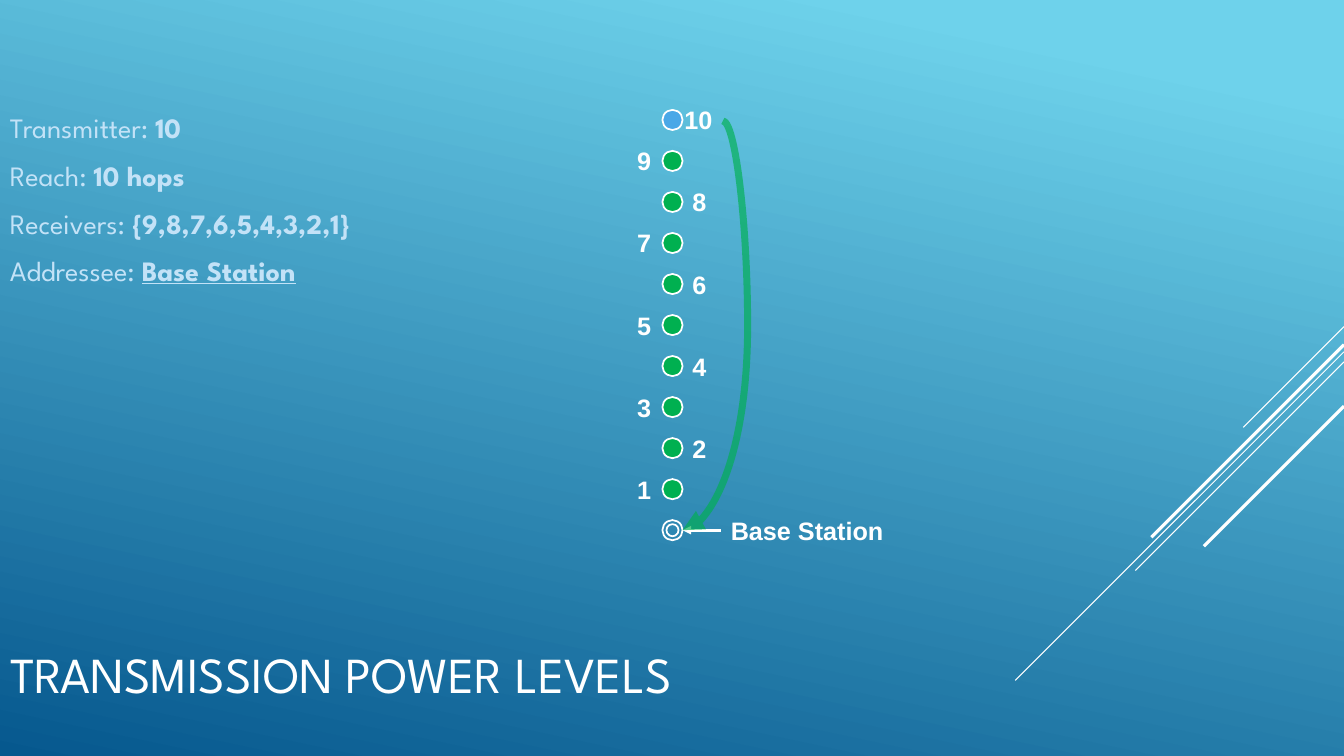
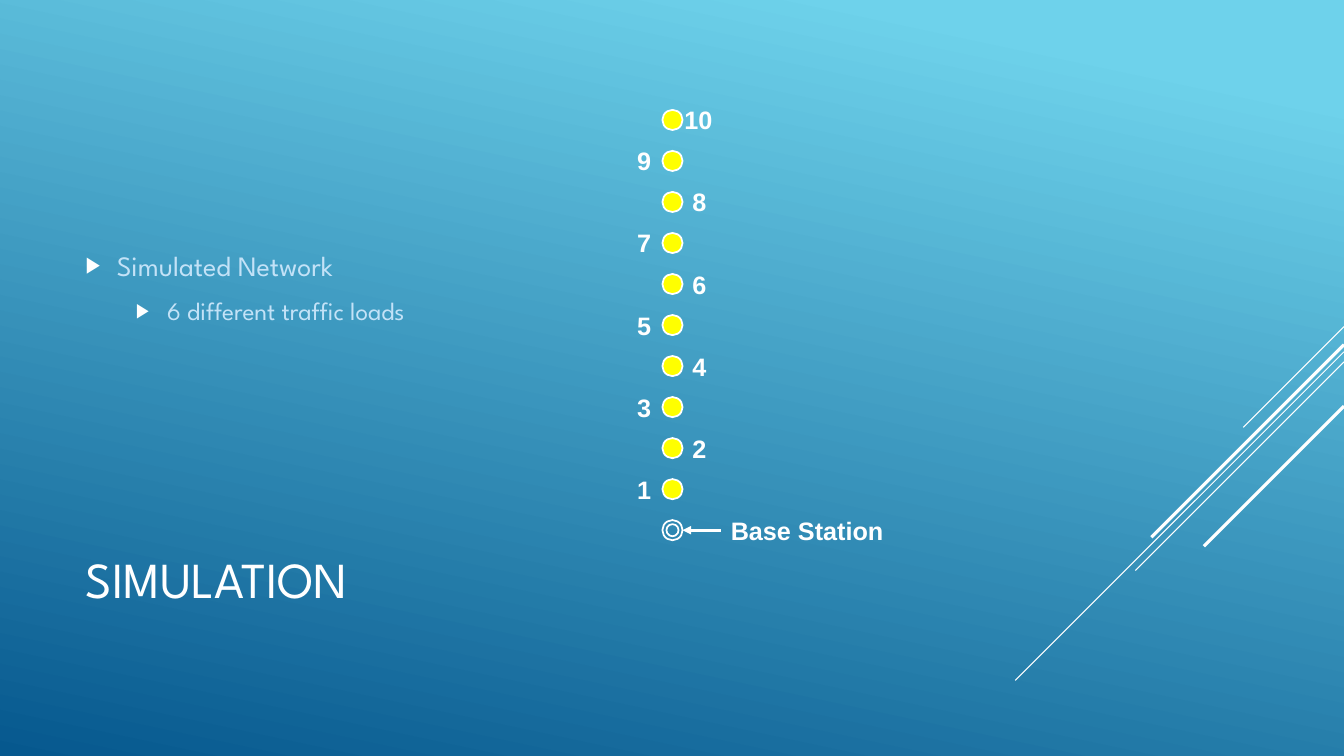
from lxml.etree import SubElement
from pptx import Presentation
from pptx.dml.color import RGBColor
from pptx.enum.shapes import MSO_CONNECTOR as Connector, MSO_SHAPE as Shape
from pptx.enum.text import MSO_ANCHOR as Anchor, MSO_AUTO_SIZE as AutoSize, PP_ALIGN as Align
from pptx.oxml.ns import qn
from pptx.util import Inches, Pt

COLORS = {
    "sky": "6ED2EB",
    "deep": "06588E",
    "white": "FFFFFF",
    "body": "C3E2F7",
    "receiver": "00B050",
    "transmitter": "4AA8E7",
    "idle": "FFFF00",
}
HEADING_FONT = "League Spartan"
LABEL_FONT = "Arial"
TITLE_ONLY = 5
STREAKS = [
    (3.24, 1.0, 0.75),
    (3.49, 3.26, 0.75),
    (3.59, 2.07, 0.75),
    (3.42, 1.91, 2.25),
    (4.03, 1.39, 2.25),
]
NODE_COUNT = 10
NODE_PITCH = 0.407
NODE_SIZE = 0.2
CHAIN_LEFT, CHAIN_TOP = 6.22, 1.0


def rgb(name):
    return RGBColor.from_string(COLORS[name])


def style_font(font, name, size, color, bold=None):
    font.name = name
    font.size = Pt(size)
    font.color.rgb = rgb(color)
    font.bold = bold


def add_line(slide, start, end, color, width, kind=Connector.STRAIGHT, arrow=False):
    points = [Inches(value) for value in (*start, *end)]
    connector = slide.shapes.add_connector(kind, *points)
    connector.line.color.rgb = rgb(color)
    connector.line.width = Pt(width)
    properties = connector.element.spPr
    if arrow:
        SubElement(properties.find(qn("a:ln")), qn("a:tailEnd"), type="triangle")
    SubElement(properties, qn("a:effectLst"))
    return connector


def style_master(presentation, slide):
    master = presentation.slide_master
    fill = master.background.fill
    fill.gradient()
    fill.gradient_angle = 258
    for stop, position, color in zip(fill.gradient_stops, (0.1, 1), ("sky", "deep")):
        stop.position = position
        stop.color.rgb = rgb(color)
    for number, (top, reach, width) in enumerate(STREAKS, start=20):
        streak = add_line(slide, (13.33, top), (13.33 - reach, top + reach), "white", width)
        streak.element.find(".//" + qn("p:cNvPr")).set("id", str(number))
        master.shapes.element.append(streak.element)


def set_title(slide, text, left, top):
    title = slide.shapes.title
    title.left, title.top = Inches(left), Inches(top)
    title.width, title.height = Inches(9.33), Inches(1.65)
    frame = title.text_frame
    frame.text = text
    frame.auto_size = AutoSize.NONE
    frame.vertical_anchor = Anchor.MIDDLE
    paragraph = frame.paragraphs[0]
    paragraph.alignment = Align.LEFT
    style_font(paragraph.font, HEADING_FONT, 36, "white")


def add_body(slide, left, top, width, paragraph_count):
    box = slide.shapes.add_textbox(Inches(left), Inches(top), Inches(width), Inches(3.95))
    frame = box.text_frame
    frame.word_wrap = True
    frame.vertical_anchor = Anchor.MIDDLE
    for _ in range(paragraph_count - 1):
        frame.add_paragraph()
    return frame.paragraphs


def style_body(paragraph, size):
    paragraph.alignment = Align.JUSTIFY
    paragraph.line_spacing = Pt(size * 1.2)
    paragraph.space_before = Pt(size * 0.2)
    paragraph.space_after = Pt(6)
    style_font(paragraph.font, HEADING_FONT, size, "body")


def add_facts(slide, left, top, facts):
    paragraphs = add_body(slide, left, top, 9.33, len(facts))
    for paragraph, (name, value) in zip(paragraphs, facts):
        style_body(paragraph, 20)
        paragraph.add_run().text = f"{name}: "
        run = paragraph.add_run()
        run.text = value
        run.font.bold = True
    run.font.underline = True


def add_bullets(slide, left, top, items):
    paragraphs = add_body(slide, left, top, 8.78, len(items))
    for paragraph, (level, text) in zip(paragraphs, items):
        paragraph.text = text
        paragraph.level = level
        properties = paragraph._p.get_or_add_pPr()
        properties.set("marL", str(Inches(0.31 + 0.5 * level)))
        properties.set("indent", str(Inches(-0.31)))
        color = SubElement(properties, qn("a:buClr"))
        SubElement(color, qn("a:srgbClr"), val=COLORS["white"])
        SubElement(properties, qn("a:buSzPct"), val="80000")
        SubElement(properties, qn("a:buFont"), typeface=LABEL_FONT)
        SubElement(properties, qn("a:buChar"), char="▶")
        style_body(paragraph, 20 - 2 * level)


def add_circle(slide, center_x, center_y, size, color=None):
    corner = Inches(center_x - size / 2), Inches(center_y - size / 2)
    circle = slide.shapes.add_shape(Shape.OVAL, *corner, Inches(size), Inches(size))
    circle.shadow.inherit = False
    if color:
        circle.fill.solid()
        circle.fill.fore_color.rgb = rgb(color)
    else:
        circle.fill.background()
    circle.line.color.rgb = rgb("white")
    circle.line.width = Pt(1.25)


def add_label(slide, text, left, center_y, width):
    box = slide.shapes.add_textbox(
        Inches(left), Inches(center_y - 0.2), Inches(width), Inches(0.4))
    frame = box.text_frame
    frame.word_wrap = False
    frame.auto_size = AutoSize.SHAPE_TO_FIT_TEXT
    frame.text = text
    style_font(frame.paragraphs[0].font, LABEL_FONT, 18, "white", True)


def add_chain(slide, left, top, node_color, last_color):
    center_x = left + 0.45
    base_y = top + 0.19 + NODE_COUNT * NODE_PITCH
    for size in (NODE_SIZE, 0.12):
        add_circle(slide, center_x, base_y, size)
    for number in range(1, NODE_COUNT + 1):
        center_y = base_y - number * NODE_PITCH
        is_last = number == NODE_COUNT
        add_circle(slide, center_x, center_y, NODE_SIZE, last_color if is_last else node_color)
        if is_last:
            label_left, label_width = left + 0.47, 0.48
        else:
            label_left, label_width = left + (0 if number % 2 else 0.55), 0.34
        add_label(slide, str(number), label_left, center_y, label_width)
    add_label(slide, "Base Station", left + 0.93, base_y, 1.73)
    add_line(slide, (left + 0.93, base_y), (left + 0.55, base_y), "white", 2, arrow=True)


def add_transmission(slide, left, top):
    curve = add_line(slide, (left + 0.95, top + 0.2), (left + 0.55, top + 4.26),
                     "receiver", 5, Connector.CURVE, True)
    properties = curve.element.spPr
    guides = properties.find(".//" + qn("a:avLst"))
    SubElement(guides, qn("a:gd"), name="adj1", fmla="val -61500")
    color = properties.find(".//" + qn("a:srgbClr"))
    SubElement(color, qn("a:alpha"), val="65000")


def build_power_slide(slide):
    set_title(slide, "TRANSMISSION POWER LEVELS", 0, 5.86)
    add_chain(slide, CHAIN_LEFT, CHAIN_TOP, "receiver", "transmitter")
    add_facts(slide, 0, 0, [
        ("Transmitter", "10"),
        ("Reach", "10 hops"),
        ("Receivers", "{9,8,7,6,5,4,3,2,1}"),
        ("Addressee", "Base Station"),
    ])
    add_transmission(slide, CHAIN_LEFT, CHAIN_TOP)


def build_simulation_slide(slide):
    set_title(slide, "SIMULATION", 0.75, 4.91)
    add_bullets(slide, 0.75, 0.87, [
        (0, "Simulated Network"),
        (1, "6 different traffic loads"),
    ])
    add_chain(slide, CHAIN_LEFT, CHAIN_TOP, "idle", "idle")


def main():
    presentation = Presentation()
    presentation.slide_width = Inches(13.33)
    presentation.slide_height = Inches(7.5)
    layout = presentation.slide_layouts[TITLE_ONLY]
    power_slide = presentation.slides.add_slide(layout)
    style_master(presentation, power_slide)
    build_power_slide(power_slide)
    build_simulation_slide(presentation.slides.add_slide(layout))
    presentation.save("out.pptx")


if __name__ == "__main__":
    main()
